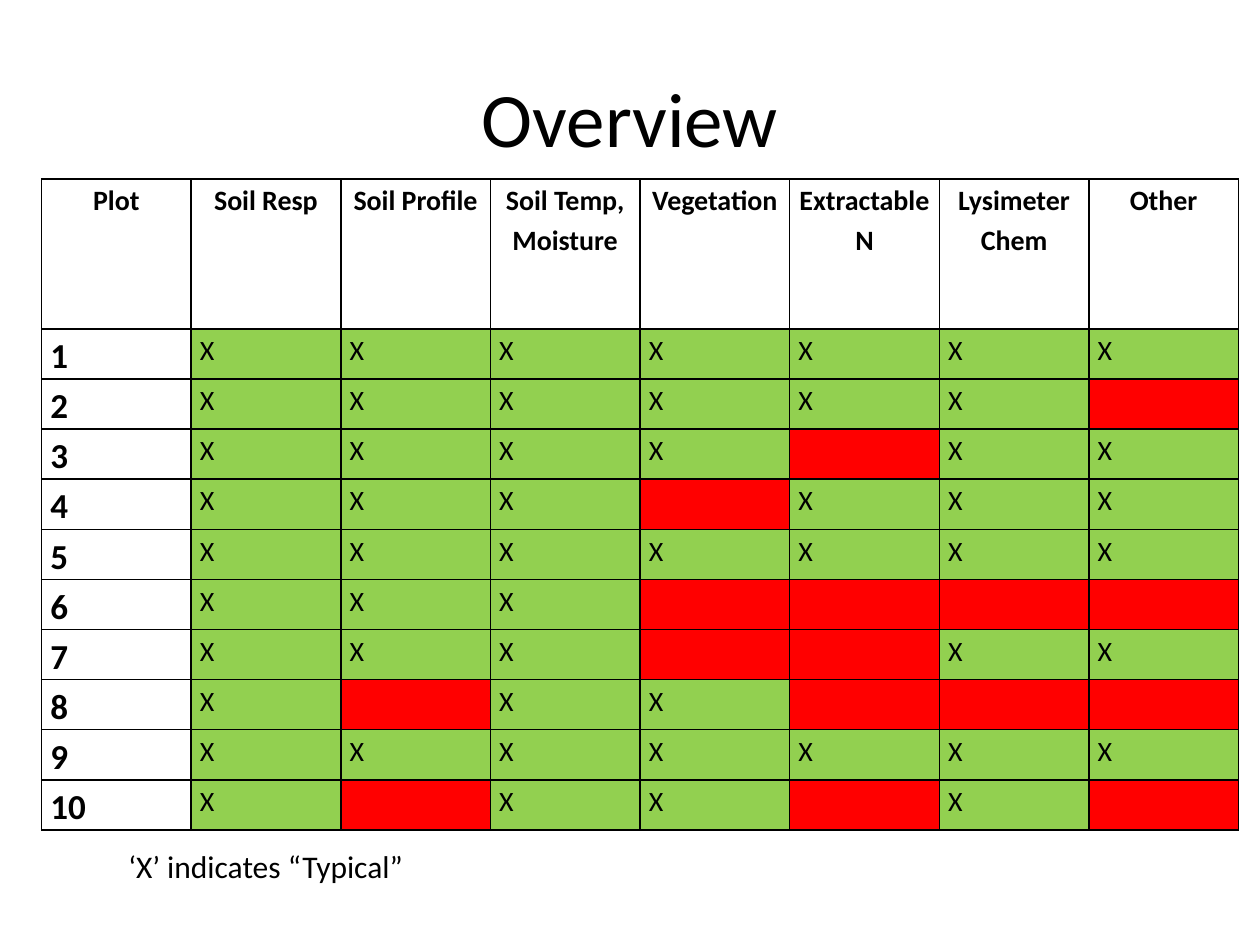
from dataclasses import dataclass

from lxml import etree
from pptx import Presentation
from pptx.dml.color import RGBColor
from pptx.enum.text import MSO_ANCHOR, PP_ALIGN
from pptx.oxml.ns import qn
from pptx.util import Inches, Pt

CENTER, LEFT = PP_ALIGN.CENTER, PP_ALIGN.LEFT
MIDDLE = MSO_ANCHOR.MIDDLE
TITLE_ONLY = 5
FONT = "Calibri"
COLORS = {"ink": "000000", "typical": "92D050", "atypical": "FF0000"}

TABLE_LEFT, TABLE_TOP, TABLE_WIDTH, TABLE_HEIGHT = 0.33, 1.42, 9.5, 5.17
HEADER_HEIGHT = 1.19
BORDER_WIDTH = Pt(1)


@dataclass(frozen=True)
class CellStyle:
    size: int
    bold: bool = False
    align: PP_ALIGN = LEFT
    fill: str | None = None


HEADER = CellStyle(16, bold=True, align=CENTER)
PLOT_NUMBER = CellStyle(20, bold=True)
TYPICAL = CellStyle(16, fill="typical")
ATYPICAL = CellStyle(16, fill="atypical")

MEASUREMENTS = ["Soil Resp", "Soil Profile", "Soil Temp, Moisture", "Vegetation",
                "Extractable\nN", "Lysimeter Chem", "Other"]
ATYPICAL_BY_PLOT = {
    1: [],
    2: ["Other"],
    3: ["Extractable\nN"],
    4: ["Vegetation"],
    5: [],
    6: ["Vegetation", "Extractable\nN", "Lysimeter Chem", "Other"],
    7: ["Vegetation", "Extractable\nN"],
    8: ["Soil Profile", "Extractable\nN", "Lysimeter Chem", "Other"],
    9: [],
    10: ["Soil Profile", "Extractable\nN", "Other"],
}


def format_text(frame, size: int, bold: bool = False, align: PP_ALIGN = LEFT) -> None:
    for paragraph in frame.paragraphs:
        paragraph.alignment = align
        for run in paragraph.runs:
            run.font.name = FONT
            run.font.size = Pt(size)
            run.font.bold = bold
            run.font.color.rgb = RGBColor.from_string(COLORS["ink"])


def add_borders(cell) -> None:
    properties = cell._tc.get_or_add_tcPr()
    for position, side in enumerate(("lnL", "lnR", "lnT", "lnB")):
        line = etree.Element(qn(f"a:{side}"), w=str(BORDER_WIDTH))
        fill = etree.SubElement(line, qn("a:solidFill"))
        etree.SubElement(fill, qn("a:srgbClr"), val=COLORS["ink"])
        properties.insert(position, line)


def fill_cell(cell, text: str, style: CellStyle) -> None:
    cell.margin_left = cell.margin_right = Inches(0.07)
    cell.margin_top = cell.margin_bottom = 0
    if style.fill:
        cell.fill.solid()
        cell.fill.fore_color.rgb = RGBColor.from_string(COLORS[style.fill])
    else:
        cell.fill.background()
    add_borders(cell)
    if text:
        cell.text_frame.text = text
        format_text(cell.text_frame, style.size, style.bold, style.align)
        for paragraph in cell.text_frame.paragraphs:
            paragraph.line_spacing = 1.15


def add_title(slide) -> None:
    title = slide.shapes.title
    title.left, title.top = Inches(0.5), Inches(0.3)
    title.width, title.height = Inches(9), Inches(1.25)
    title.text_frame.text = "Overview"
    title.text_frame.vertical_anchor = MIDDLE
    format_text(title.text_frame, 44, align=CENTER)


def add_plot_table(slide) -> None:
    rows, columns = len(ATYPICAL_BY_PLOT) + 1, len(MEASUREMENTS) + 1
    table = slide.shapes.add_table(
        rows, columns, Inches(TABLE_LEFT), Inches(TABLE_TOP),
        Inches(TABLE_WIDTH), Inches(TABLE_HEIGHT)).table
    table.first_row = table.horz_banding = False
    for column in table.columns:
        column.width = Inches(TABLE_WIDTH / columns)
    for row in table.rows:
        row.height = Inches((TABLE_HEIGHT - HEADER_HEIGHT) / (rows - 1))
    table.rows[0].height = Inches(HEADER_HEIGHT)

    for column, heading in enumerate(["Plot", *MEASUREMENTS]):
        fill_cell(table.cell(0, column), heading, HEADER)
    for row, (plot, atypical) in enumerate(ATYPICAL_BY_PLOT.items(), start=1):
        fill_cell(table.cell(row, 0), str(plot), PLOT_NUMBER)
        for column, measurement in enumerate(MEASUREMENTS, start=1):
            if measurement in atypical:
                fill_cell(table.cell(row, column), "", ATYPICAL)
            else:
                fill_cell(table.cell(row, column), "X", TYPICAL)


def add_legend(slide) -> None:
    legend = slide.shapes.add_textbox(Inches(0.92), Inches(6.67), Inches(4.75), Inches(0.4))
    legend.text_frame.word_wrap = True
    legend.text_frame.text = "‘X’ indicates “Typical”"
    format_text(legend.text_frame, 18)


def main() -> None:
    presentation = Presentation()
    presentation.slide_width, presentation.slide_height = Inches(10), Inches(7.5)
    slide = presentation.slides.add_slide(presentation.slide_layouts[TITLE_ONLY])
    add_title(slide)
    add_plot_table(slide)
    add_legend(slide)
    presentation.save("out.pptx")


if __name__ == "__main__":
    main()
